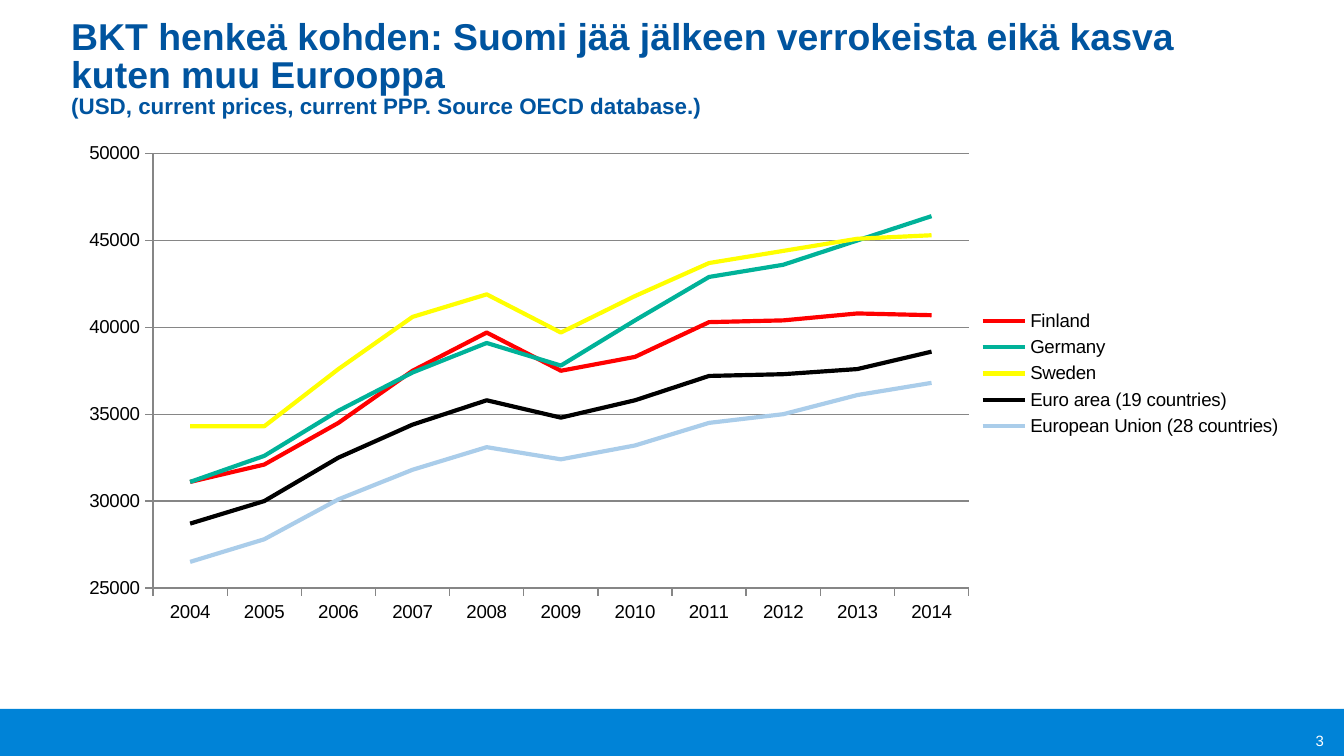
from dataclasses import dataclass

from lxml import etree
from pptx import Presentation
from pptx.chart.chart import Chart
from pptx.chart.data import CategoryChartData
from pptx.dml.color import RGBColor
from pptx.enum.chart import XL_CHART_TYPE, XL_LEGEND_POSITION, XL_TICK_MARK
from pptx.enum.shapes import MSO_SHAPE
from pptx.enum.text import MSO_ANCHOR, MSO_AUTO_SIZE, PP_ALIGN
from pptx.oxml.ns import qn
from pptx.util import Inches, Pt

LINE_CHART = XL_CHART_TYPE.LINE
LEGEND_RIGHT = XL_LEGEND_POSITION.RIGHT
TICK_OUTSIDE = XL_TICK_MARK.OUTSIDE
TICK_NONE = XL_TICK_MARK.NONE
RECTANGLE = MSO_SHAPE.RECTANGLE
MIDDLE = MSO_ANCHOR.MIDDLE
NO_AUTOFIT = MSO_AUTO_SIZE.NONE
LEFT, RIGHT = PP_ALIGN.LEFT, PP_ALIGN.RIGHT

FONT = "Arial"
TITLE_BLUE = "00549F"
FOOTER_BLUE = "0083D7"
WHITE = "FFFFFF"
BLACK = "000000"
AXIS_GRAY = "868686"
SLIDE_WIDTH = Inches(10)
SLIDE_HEIGHT = SLIDE_WIDTH * 9 // 16
FOOTER_HEIGHT = Inches(0.35)
YEARS = [str(year) for year in range(2004, 2015)]
PLOT_AREA = {"x": 0.077, "y": 0.06, "w": 0.659, "h": 0.869}


@dataclass
class Country:
    name: str
    color: str
    values: list[int]


COUNTRIES = [
    Country("Finland", "FF0000",
            [31100, 32100, 34500, 37500, 39700, 37500, 38300, 40300, 40400, 40800, 40700]),
    Country("Germany", "00B299",
            [31100, 32600, 35200, 37400, 39100, 37800, 40400, 42900, 43600, 45000, 46400]),
    Country("Sweden", "FFFF00",
            [34300, 34300, 37600, 40600, 41900, 39700, 41800, 43700, 44400, 45100, 45300]),
    Country("Euro area (19 countries)", BLACK,
            [28700, 30000, 32500, 34400, 35800, 34800, 35800, 37200, 37300, 37600, 38600]),
    Country("European Union (28 countries)", "AACDEA",
            [26500, 27800, 30100, 31800, 33100, 32400, 33200, 34500, 35000, 36100, 36800]),
]


def rgb(color: str) -> RGBColor:
    return RGBColor.from_string(color)


def add_text(paragraph, text: str, *, size: float, color: str,
             bold: bool = False, align=LEFT) -> None:
    paragraph.alignment = align
    run = paragraph.add_run()
    run.text = text
    run.font.name = FONT
    run.font.size = Pt(size)
    run.font.bold = bold
    run.font.color.rgb = rgb(color)


def add_footer(slide) -> None:
    bar = slide.shapes.add_shape(RECTANGLE, 0, SLIDE_HEIGHT - FOOTER_HEIGHT,
                                 SLIDE_WIDTH, FOOTER_HEIGHT)
    bar.shadow.inherit = False
    bar.fill.solid()
    bar.fill.fore_color.rgb = rgb(FOOTER_BLUE)
    bar.line.fill.background()

    number = slide.shapes.add_textbox(Inches(9.33), Inches(5.43), Inches(0.52), Inches(0.16))
    frame = number.text_frame
    frame.word_wrap = True
    frame.vertical_anchor = MIDDLE
    frame.margin_left = frame.margin_right = frame.margin_top = frame.margin_bottom = 0
    add_text(frame.paragraphs[0], "3", size=8, color=WHITE, align=RIGHT)


def format_title(slide) -> None:
    title = slide.shapes.title
    title.left, title.top = Inches(0.43), Inches(0.11)
    title.width, title.height = Inches(9.21), Inches(0.81)
    frame = title.text_frame
    frame.word_wrap = True
    frame.auto_size = NO_AUTOFIT
    frame.vertical_anchor = MIDDLE
    paragraph = frame.paragraphs[0]
    paragraph.line_spacing = 0.85
    add_text(paragraph, "BKT henkeä kohden: Suomi jää jälkeen verrokeista eikä kasva kuten muu Eurooppa",
             size=20, color=TITLE_BLUE, bold=True)
    paragraph.add_line_break()
    add_text(paragraph, "(USD, current prices, current PPP. Source OECD database.)",
             size=12, color=TITLE_BLUE, bold=True)


def set_plot_area(chart: Chart) -> None:
    plot_area = chart.element.find(".//" + qn("c:plotArea"))
    for layout in plot_area.findall(qn("c:layout")):
        plot_area.remove(layout)
    layout = etree.Element(qn("c:layout"))
    manual = etree.SubElement(layout, qn("c:manualLayout"))
    settings = {"layoutTarget": "inner", "xMode": "edge", "yMode": "edge", **PLOT_AREA}
    for name, value in settings.items():
        etree.SubElement(manual, qn("c:" + name)).set("val", str(value))
    plot_area.insert(0, layout)


def format_line(line, color: str, width: float) -> None:
    line.color.rgb = rgb(color)
    line.width = Pt(width)


def add_gdp_chart(slide) -> None:
    data = CategoryChartData(number_format="General")
    data.categories = YEARS
    for country in COUNTRIES:
        data.add_series(country.name, country.values)
    chart = slide.shapes.add_chart(LINE_CHART, Inches(0.43), Inches(0.92),
                                   Inches(9.21), Inches(3.72), data).chart
    chart.has_title = False
    chart.font.name = FONT
    chart.font.size = Pt(10)
    chart.font.color.rgb = rgb(BLACK)
    chart.has_legend = True
    chart.legend.position = LEGEND_RIGHT
    chart.legend.include_in_layout = False
    set_plot_area(chart)

    for axis in (chart.category_axis, chart.value_axis):
        axis.major_tick_mark = TICK_OUTSIDE
        axis.minor_tick_mark = TICK_NONE
        format_line(axis.format.line, AXIS_GRAY, 0.75)
    value_axis = chart.value_axis
    value_axis.minimum_scale = 25000
    value_axis.maximum_scale = 50000
    value_axis.major_unit = 5000
    value_axis.has_major_gridlines = True
    format_line(value_axis.major_gridlines.format.line, AXIS_GRAY, 0.75)

    for series, country in zip(chart.plots[0].series, COUNTRIES):
        series.smooth = False
        format_line(series.format.line, country.color, 2.25)


def main() -> None:
    presentation = Presentation()
    presentation.slide_width = SLIDE_WIDTH
    presentation.slide_height = SLIDE_HEIGHT
    slide = presentation.slides.add_slide(presentation.slide_layouts[5])
    add_footer(slide)
    format_title(slide)
    add_gdp_chart(slide)
    presentation.save("out.pptx")


if __name__ == "__main__":
    main()
